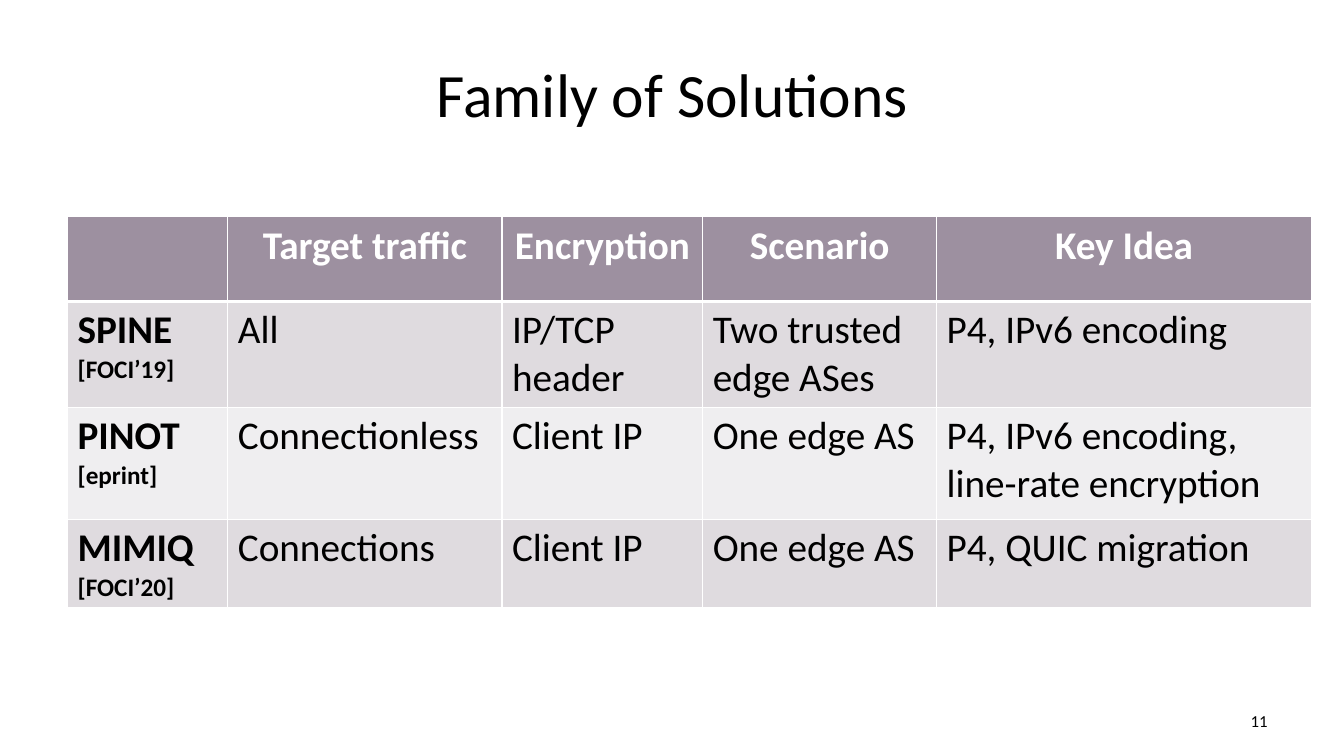
from lxml.etree import SubElement
from pptx import Presentation
from pptx.dml.color import RGBColor
from pptx.enum.text import MSO_ANCHOR as Anchor, PP_ALIGN as Align
from pptx.oxml.ns import qn
from pptx.util import Inches, Pt

BLACK = RGBColor(0x00, 0x00, 0x00)
WHITE = RGBColor(0xFF, 0xFF, 0xFF)
MAUVE = RGBColor(0x9D, 0x90, 0xA0)
BAND_DARK = RGBColor(0xDF, 0xDB, 0xDF)
BAND_LIGHT = RGBColor(0xEF, 0xEE, 0xF0)


def write(frame, text, size=28, small=18, bold=False, color=BLACK, align=Align.LEFT, first_only=False):
    for number, line in enumerate(text.split("\n")):
        para = frame.add_paragraph() if number else frame.paragraphs[0]
        para.alignment = align
        span = para.add_run()
        span.text = line
        span.font.name = "Calibri"
        span.font.size = Pt(small if number and first_only else size)
        span.font.bold = bold
        span.font.color.rgb = color


def set_borders(cell, **widths):
    properties = cell._tc.get_or_add_tcPr()
    for side in ("L", "R", "T", "B"):
        line = SubElement(properties, qn(f"a:ln{side}"), w=str(Pt(widths.get(side, 1))))
        fill = SubElement(line, qn("a:solidFill"))
        SubElement(fill, qn("a:srgbClr"), val=str(WHITE))


deck = Presentation()
deck.slide_width = Inches(13.33)
deck.slide_height = Inches(7.5)
page = deck.slides.add_slide(deck.slide_layouts[5])

title = page.shapes.title
title.left, title.top = Inches(0.67), Inches(0.3)
title.width, title.height = Inches(12), Inches(1.25)
title.text_frame.vertical_anchor = Anchor.MIDDLE
write(title.text_frame, "Family of Solutions", size=44, align=Align.CENTER)

rows = [
    ["", "Target traffic", "Encryption", "Scenario", "Key Idea"],
    ["SPINE\n[FOCI’19]", "All", "IP/TCP header", "Two trusted edge ASes", "P4, IPv6 encoding"],
    ["PINOT\n[eprint]", "Connectionless", "Client IP", "One edge AS",
     "P4, IPv6 encoding,\nline-rate encryption"],
    ["MIMIQ\n[FOCI’20]", "Connections", "Client IP", "One edge AS", "P4, QUIC migration"],
]
column_widths = [1.59, 2.72, 1.99, 2.32, 3.72]
row_heights = [0.84, 0.86, 1.11, 0.86]

table = page.shapes.add_table(
    len(rows), len(column_widths), Inches(0.67), Inches(2.15),
    Inches(sum(column_widths)), Inches(sum(row_heights)),
).table
for column, width in zip(table.columns, column_widths):
    column.width = Inches(width)
for row, height in zip(table.rows, row_heights):
    row.height = Inches(height)

for row_number, texts in enumerate(rows):
    is_header = row_number == 0
    band = MAUVE if is_header else BAND_DARK if row_number % 2 else BAND_LIGHT
    for column_number, text in enumerate(texts):
        cell = table.cell(row_number, column_number)
        set_borders(cell, B=3 if is_header else 1, T=3 if row_number == 1 else 1)
        cell.fill.solid()
        cell.fill.fore_color.rgb = band
        is_name = column_number == 0
        write(
            cell.text_frame, text, bold=is_header or is_name, first_only=is_name,
            color=WHITE if is_header else BLACK,
            align=Align.CENTER if is_header else Align.LEFT,
        )

number_box = page.shapes.add_textbox(Inches(9.56), Inches(6.95), Inches(3.11), Inches(0.4))
number_box.text_frame.word_wrap = True
number_box.text_frame.vertical_anchor = Anchor.MIDDLE
write(number_box.text_frame, "11", size=12, align=Align.RIGHT)

deck.save("out.pptx")
